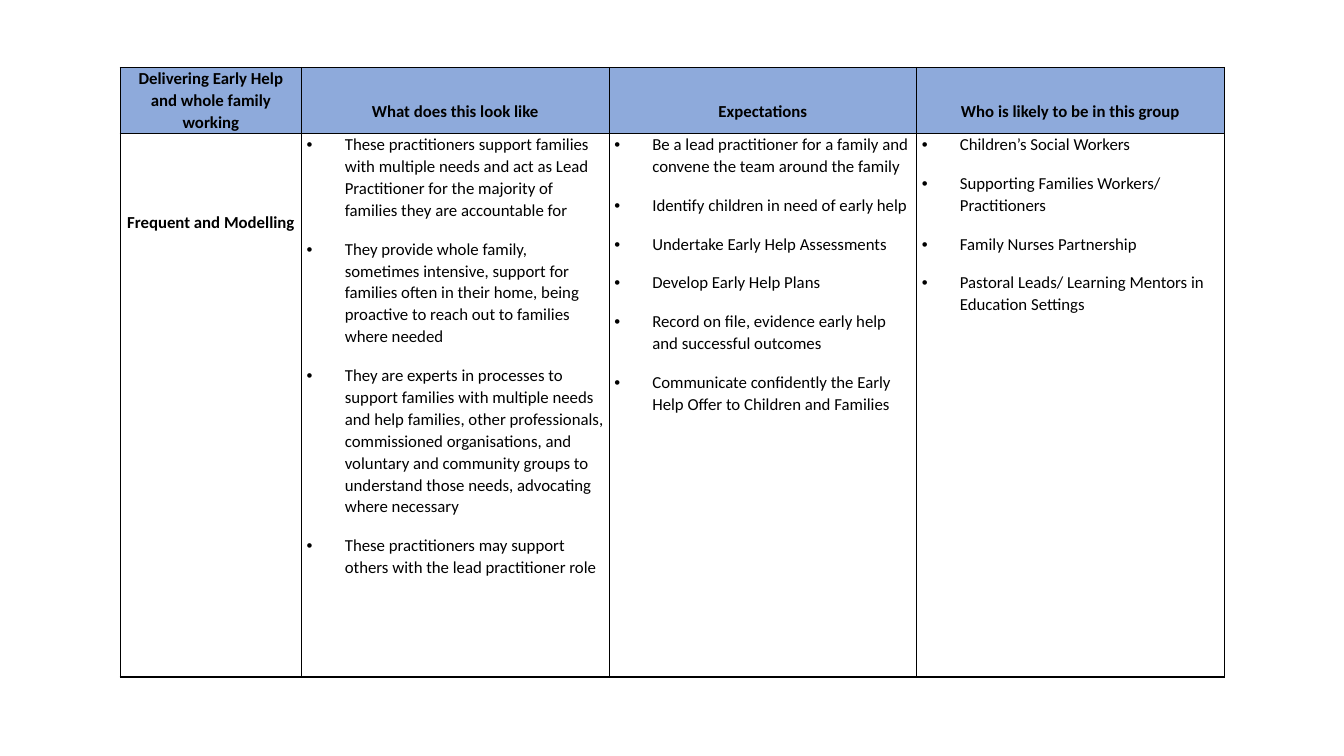
import dataclasses

import lxml.etree
import pptx
import pptx.dml.color
import pptx.enum.text
import pptx.oxml.ns
import pptx.util

Cm, Pt = pptx.util.Cm, pptx.util.Pt
qn = pptx.oxml.ns.qn
CENTER = pptx.enum.text.PP_ALIGN.CENTER
LEFT = pptx.enum.text.PP_ALIGN.LEFT


@dataclasses.dataclass(frozen=True)
class Theme:
    font: str = "Calibri"
    size: float = 12
    line_spacing: float = 1.07
    ink: str = "000000"
    header_fill: str = "8EAADB"
    body_fill: str = "FFFFFF"
    border_width: float = 1
    indent: float = 0.96
    side_margin: float = 0.13


HEADERS = [
    "Delivering Early Help and whole family working",
    "What does this look like",
    "Expectations",
    "Who is likely to be in this group",
]
GROUP = "Frequent and Modelling"
DETAILS = [
    [
        "These practitioners support families with multiple needs and act as "
        "Lead Practitioner for the majority of families they are accountable for",
        "They provide whole family, sometimes intensive, support for families "
        "often in their home, being proactive to reach out to families where needed",
        "They are experts in processes to support families with multiple needs "
        "and help families, other professionals, commissioned organisations, and "
        "voluntary and community groups to understand those needs, advocating "
        "where necessary",
        "These practitioners may support others with the lead practitioner role",
    ],
    [
        "Be a lead practitioner for a family and convene the team around the family",
        "Identify children in need of early help",
        "Undertake Early Help Assessments",
        "Develop Early Help Plans",
        "Record on file, evidence early help and successful outcomes",
        "Communicate confidently the Early Help Offer to Children and Families",
    ],
    [
        "Children’s Social Workers",
        "Supporting Families Workers/ Practitioners",
        "Family Nurses Partnership",
        "Pastoral Leads/ Learning Mentors in Education Settings",
    ],
]


def apply(target, values):
    for name, value in values.items():
        setattr(target, name, value)


class PageBuilder:
    def __init__(self, page, theme):
        self.page = page
        self.theme = theme

    def color(self, value):
        return pptx.dml.color.RGBColor.from_string(value)

    def table(self, left, top, widths, heights):
        frame = self.page.shapes.add_table(
            len(heights), len(widths), Cm(left), Cm(top),
            Cm(sum(widths)), Cm(sum(heights)))
        table = frame.table
        apply(table, {"first_row": False, "horz_banding": False})
        for column, width in zip(table.columns, widths):
            column.width = Cm(width)
        for row, height in zip(table.rows, heights):
            row.height = Cm(height)
        return table

    def borders(self, cell):
        properties = cell._tc.get_or_add_tcPr()
        for side in ("lnL", "lnR", "lnT", "lnB"):
            line = lxml.etree.SubElement(
                properties, qn(f"a:{side}"), w=str(Pt(self.theme.border_width)))
            fill = lxml.etree.SubElement(line, qn("a:solidFill"))
            lxml.etree.SubElement(fill, qn("a:srgbClr"), val=self.theme.ink)

    def cell(self, cell, texts, fill, top=0, heading=False):
        """Fill a cell with centred bold headings or with a bulleted list."""
        theme = self.theme
        self.borders(cell)
        cell.fill.solid()
        cell.fill.fore_color.rgb = self.color(fill)
        apply(cell, {
            "margin_left": Cm(theme.side_margin),
            "margin_right": Cm(theme.side_margin),
            "margin_top": Cm(top),
            "margin_bottom": 0,
        })
        for index, text in enumerate(texts):
            box = cell.text_frame
            para = box.add_paragraph() if index else box.paragraphs[0]
            apply(para, {
                "alignment": CENTER if heading else LEFT,
                "line_spacing": theme.line_spacing,
                "space_before": Pt(0 if heading else 6),
                "space_after": Pt(0 if heading else 6),
            })
            if not heading:
                self.bullet(para)
            span = para.add_run()
            span.text = text
            apply(span.font, {
                "name": theme.font, "size": Pt(theme.size), "bold": heading})
            span.font.color.rgb = self.color(theme.ink)

    def bullet(self, para):
        properties = para._p.get_or_add_pPr()
        indent = Cm(self.theme.indent)
        properties.set("marL", str(indent))
        properties.set("indent", str(-indent))
        lxml.etree.SubElement(properties, qn("a:buFont"), typeface="Arial")
        lxml.etree.SubElement(properties, qn("a:buChar"), char="•")


def main():
    deck = pptx.Presentation()
    apply(deck, {"slide_width": Cm(33.87), "slide_height": Cm(19.05)})
    theme = Theme()
    builder = PageBuilder(deck.slides.add_slide(deck.slide_layouts[6]), theme)

    table = builder.table(3.03, 1.7, [4.57] + [7.75] * 3, [1.66, 13.7])
    for column, header in enumerate(HEADERS):
        builder.cell(table.cell(0, column), [header], theme.header_fill,
                     top=0.83 if column else 0, heading=True)
    builder.cell(table.cell(1, 0), [GROUP], theme.body_fill, top=1.97, heading=True)
    for column, points in enumerate(DETAILS, start=1):
        builder.cell(table.cell(1, column), points, theme.body_fill)

    deck.save("out.pptx")


if __name__ == "__main__":
    main()
